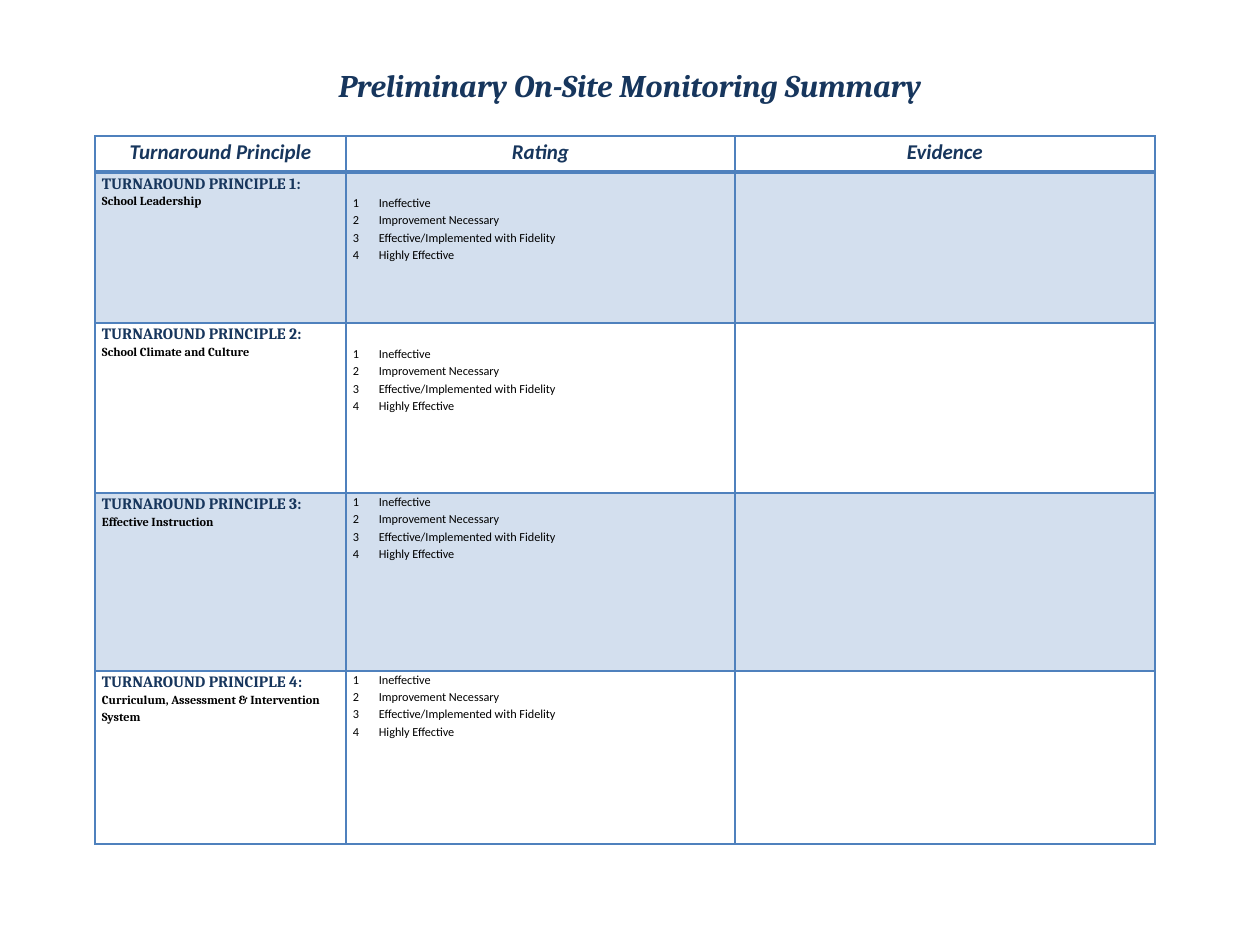
from dataclasses import dataclass

from lxml.etree import SubElement
from pptx import Presentation
from pptx.dml.color import RGBColor
from pptx.enum.text import MSO_ANCHOR, PP_ALIGN
from pptx.oxml.ns import qn
from pptx.util import Emu, Pt

TITLE = "Preliminary On-Site Monitoring Summary"
HEADINGS = ("Turnaround Principle", "Rating", "Evidence")
PRINCIPLES = (
    "School Leadership",
    "School Climate and Culture",
    "Effective Instruction",
    "Curriculum, Assessment & Intervention System",
)
RATINGS = (
    "Ineffective",
    "Improvement Necessary",
    "Effective/Implemented with Fidelity",
    "Highly Effective",
)

SLIDE_SIZE = (1260, 945)
TITLE_BOX = (0, 53, 1260, 63)
TABLE_ORIGIN = (95, 136)
COLUMN_WIDTHS = (251, 389, 420)
ROW_HEIGHTS = (36, 151, 170, 178, 173)
RATING_TOPS = (22, 22, 0, 0)
SIDE_MARGIN = 7
RATING_INDENT = 26


@dataclass(frozen=True)
class Theme:
    navy: str = "17365D"
    black: str = "000000"
    border: str = "4F81BD"
    band: str = "D3DFEE"
    serif: str = "Cambria"
    sans: str = "Calibri"
    title_size: int = 18
    heading_size: int = 12
    principle_size: int = 9
    detail_size: int = 7
    line_spacing: float = 1.15
    thin: float = 1
    thick: float = 2.25


THEME = Theme()


def text_format(name, size, color, bold=True, italic=False):
    return {"name": name, "size": Pt(size), "color": color, "bold": bold, "italic": italic}


TITLE_FORMAT = text_format(THEME.serif, THEME.title_size, THEME.navy, italic=True)
HEADING_FORMAT = text_format(THEME.sans, THEME.heading_size, THEME.navy, italic=True)
PRINCIPLE_FORMAT = text_format(THEME.serif, THEME.principle_size, THEME.navy)
NAME_FORMAT = text_format(THEME.serif, THEME.detail_size, THEME.black)
RATING_FORMAT = text_format(THEME.sans, THEME.detail_size, THEME.black, bold=False)


def px(length):
    return Emu(length * 914400 // 126)


def write(frame, lines, align=PP_ALIGN.LEFT, spacing=THEME.line_spacing, indent=0):
    """Fill a text frame with (text, format) lines; indent hangs each line."""
    for index, (text, values) in enumerate(lines):
        para = frame.add_paragraph() if index else frame.paragraphs[0]
        para.alignment, para.line_spacing = align, spacing
        if indent:
            properties = para._p.get_or_add_pPr()
            properties.set("marL", str(px(indent)))
            properties.set("indent", str(-px(indent)))
        span = para.add_run()
        span.text = text
        for key, value in values.items():
            if key == "color":
                span.font.color.rgb = RGBColor.from_string(value)
            else:
                setattr(span.font, key, value)


def style_cell(cell, row):
    margins = {"margin_left": SIDE_MARGIN, "margin_right": SIDE_MARGIN,
               "margin_top": 0, "margin_bottom": 0}
    for key, value in margins.items():
        setattr(cell, key, px(value))
    properties = cell._tc.get_or_add_tcPr()
    widths = {"L": THEME.thin, "R": THEME.thin,
              "T": THEME.thick if row == 1 else THEME.thin,
              "B": THEME.thick if row == 0 else THEME.thin}
    for side, width in widths.items():
        line = SubElement(properties, qn(f"a:ln{side}"), w=str(Pt(width)))
        fill = SubElement(line, qn("a:solidFill"))
        SubElement(fill, qn("a:srgbClr"), val=THEME.border)
    if row % 2:
        cell.fill.solid()
        cell.fill.fore_color.rgb = RGBColor.from_string(THEME.band)
    else:
        cell.fill.background()


def add_title(page):
    title = page.shapes.title
    title.left, title.top, title.width, title.height = map(px, TITLE_BOX)
    title.text_frame.vertical_anchor = MSO_ANCHOR.MIDDLE
    write(title.text_frame, [(TITLE, TITLE_FORMAT)], PP_ALIGN.CENTER, spacing=1.0)


def add_summary_table(page):
    size = (sum(COLUMN_WIDTHS), sum(ROW_HEIGHTS))
    table = page.shapes.add_table(len(ROW_HEIGHTS), len(COLUMN_WIDTHS),
                                  *map(px, TABLE_ORIGIN + size)).table
    table.first_row = table.horz_banding = False
    for column, width in zip(table.columns, COLUMN_WIDTHS):
        column.width = px(width)
    for row, height in enumerate(ROW_HEIGHTS):
        table.rows[row].height = px(height)
        for cell in table.rows[row].cells:
            style_cell(cell, row)

    for column, heading in enumerate(HEADINGS):
        write(table.cell(0, column).text_frame, [(heading, HEADING_FORMAT)], PP_ALIGN.CENTER)
    ratings = [(f"{number}\t{label}", RATING_FORMAT)
               for number, label in enumerate(RATINGS, 1)]
    for row, (name, top) in enumerate(zip(PRINCIPLES, RATING_TOPS), 1):
        write(table.cell(row, 0).text_frame,
              [(f"TURNAROUND PRINCIPLE {row}:", PRINCIPLE_FORMAT), (name, NAME_FORMAT)])
        rating_cell = table.cell(row, 1)
        rating_cell.margin_top = px(top)
        write(rating_cell.text_frame, ratings, indent=RATING_INDENT)


def main():
    deck = Presentation()
    deck.slide_width, deck.slide_height = map(px, SLIDE_SIZE)
    page = deck.slides.add_slide(deck.slide_layouts[5])
    add_title(page)
    add_summary_table(page)
    deck.save("out.pptx")


if __name__ == "__main__":
    main()
